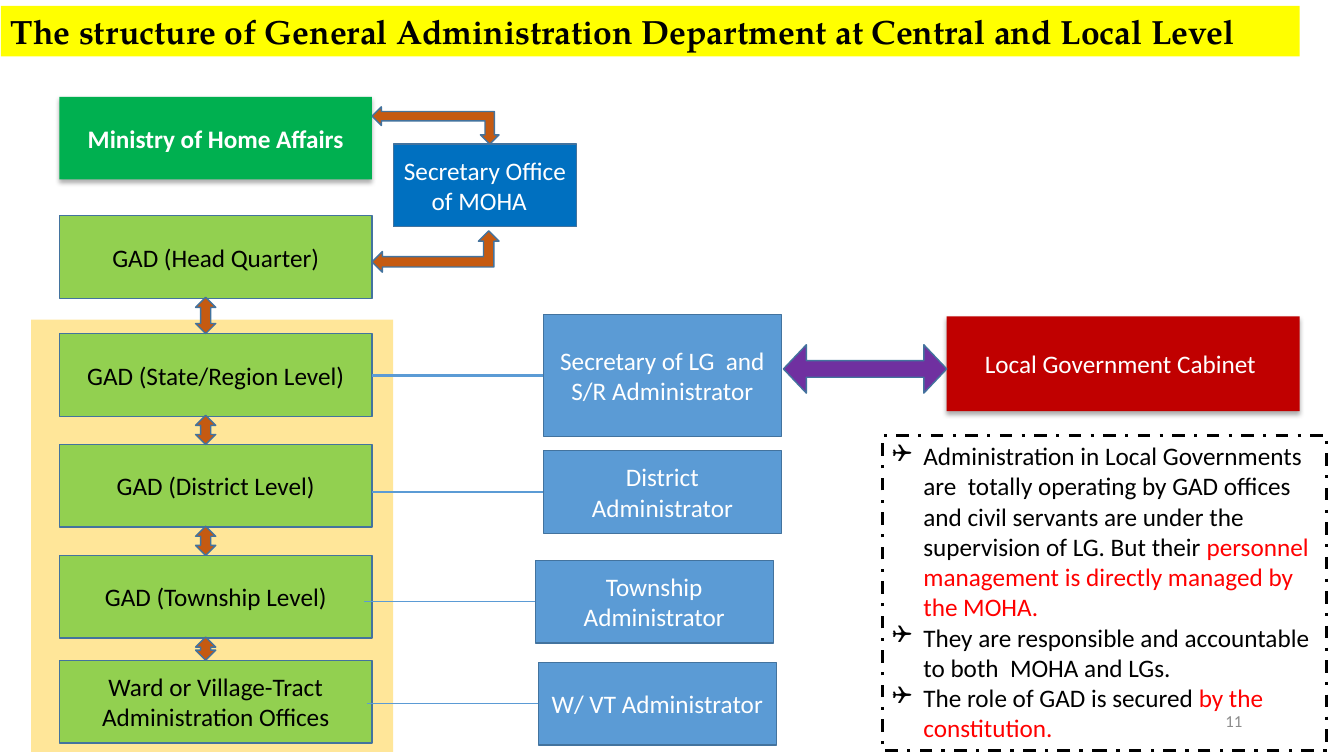
from lxml.etree import SubElement
from pptx import Presentation
from pptx.dml.color import RGBColor
from pptx.enum.dml import MSO_LINE
from pptx.enum.shapes import MSO_CONNECTOR, MSO_SHAPE
from pptx.enum.text import MSO_ANCHOR, PP_ALIGN
from pptx.oxml.ns import qn
from pptx.util import Inches, Pt

WIDTH, HEIGHT = 13.33, 7.5
BLACK, WHITE, RED = "000000", "FFFFFF", "FF0000"
GREEN, BLUE, ORANGE, EDGE = "92D050", "5B9BD5", "C55A11", "43739E"

TITLE = "The structure of General Administration Department at Central and Local Level"
OFFICES = [
    (2.14, "GAD (Head Quarter)"),
    (3.31, "GAD (State/Region Level)"),
    (4.41, "GAD (District Level)"),
    (5.51, "GAD (Township Level)"),
    (6.55, "Ward or Village-Tract Administration Offices"),
]
OFFICIALS = [
    (5.39, 3.12, 1.21, 1.5, "Secretary of LG  and S/R Administrator"),
    (5.39, 4.47, 0.82, 1.5, "District Administrator"),
    (5.31, 5.56, 0.82, 1, "Township Administrator"),
    (5.34, 6.57, 0.82, 1, "W/ VT Administrator"),
]
NOTES = [
    [("Administration in Local Governments are  totally operating by GAD offices and civil "
      "servants are under the supervision of LG. But their ", BLACK),
     ("personnel management is directly managed by the MOHA.", RED)],
    [("They are responsible and accountable to both  MOHA and LGs.", BLACK)],
    [("The role of GAD is secured ", BLACK), ("by the constitution.", RED)],
]
OFFICE_X, OFFICE_W, BOX_H = 0.59, 3.1, 0.82
OFFICE_RIGHT = OFFICE_X + OFFICE_W
OFFICIAL_W, LINK_W = 2.36, 1.7
ARROW_X, ARROW_W = 1.94, 0.2
BEND_W = 1.26
CABINET_X = 9.39

prs = Presentation()
prs.slide_width, prs.slide_height = Inches(WIDTH), Inches(HEIGHT)
s = prs.slides.add_slide(prs.slide_layouts[6])


def rgb(hex6):
    return RGBColor.from_string(hex6)


def add_run(p, text, color, size=18, bold=False, font="Calibri"):
    r = p.add_run()
    r.text = text
    r.font.size, r.font.bold, r.font.name = Pt(size), bold, font
    r.font.color.rgb = rgb(color)


def shape(kind, x, y, w, h, fill=None, line=EDGE, width=1):
    sp = s.shapes.add_shape(kind, Inches(x), Inches(y), Inches(w), Inches(h))
    sp.shadow.inherit = False
    if fill:
        sp.fill.solid()
        sp.fill.fore_color.rgb = rgb(fill)
    else:
        sp.fill.background()
    if line:
        sp.line.color.rgb, sp.line.width = rgb(line), Pt(width)
    else:
        sp.line.fill.background()
    return sp


def box(x, y, w, h, fill, text, color=WHITE, line=EDGE, bold=False):
    sp = shape(MSO_SHAPE.RECTANGLE, x, y, w, h, fill, line)
    tf = sp.text_frame
    tf.word_wrap, tf.vertical_anchor = True, MSO_ANCHOR.MIDDLE
    p = tf.paragraphs[0]
    p.alignment = PP_ALIGN.CENTER
    add_run(p, text, color, bold=bold)
    return sp


def add_shadow(sp):
    effects = sp._element.spPr.find(qn("a:effectLst"))
    shadow = SubElement(effects, qn("a:outerShdw"), blurRad=str(Pt(3.5)), dist=str(Pt(2.2)),
                        dir="5400000", algn="t", rotWithShape="0")
    color = SubElement(shadow, qn("a:srgbClr"), val=BLACK)
    SubElement(color, qn("a:alpha"), val="32000")


def link(x1, x2, y, width):
    cn = s.shapes.add_connector(MSO_CONNECTOR.STRAIGHT, Inches(x1), Inches(y), Inches(x2), Inches(y))
    cn.line.color.rgb, cn.line.width = rgb(BLUE), Pt(width)
    SubElement(cn._element.spPr, qn("a:effectLst"))


def add_bullet(p, char):
    pPr = p._p.get_or_add_pPr()
    pPr.set("marL", str(Inches(0.31)))
    pPr.set("indent", str(-Inches(0.31)))
    SubElement(pPr, qn("a:buFont"), typeface="Wingdings")
    SubElement(pPr, qn("a:buChar"), char=char)


def main():
    """Build the administration structure slide."""
    shape(MSO_SHAPE.RECTANGLE, 0.31, 3.17, 3.59, 4.29, "FFE699", None)
    title = shape(MSO_SHAPE.RECTANGLE, 0.01, 0.06, 12.88, 0.5, "FFFF00", None)
    tf = title.text_frame
    tf.word_wrap, tf.vertical_anchor = True, MSO_ANCHOR.TOP
    tf.paragraphs[0].alignment = PP_ALIGN.LEFT
    add_run(tf.paragraphs[0], TITLE, BLACK, 24, True, "TeX Gyre Pagella")

    add_shadow(box(OFFICE_X, 0.96, OFFICE_W, BOX_H, "00B050", "Ministry of Home Affairs",
                   line=None, bold=True))
    for y, name in OFFICES:
        box(OFFICE_X, y, OFFICE_W, BOX_H, GREEN, name, BLACK)
    box(3.9, 1.43, 1.82, BOX_H, "0070C0", "Secretary Office of MOHA  ")
    for x, y, h, width, name in OFFICIALS:
        box(x, y, OFFICIAL_W, h, BLUE, name)
        link(x, x - LINK_W, y + h / 2, width)
    add_shadow(box(CABINET_X, 3.14, 3.5, 0.94, "C00000", "Local Government Cabinet ", line=None))

    both = shape(MSO_SHAPE.LEFT_RIGHT_ARROW, 7.77, 3.42, CABINET_X - 7.77, 0.48, "7030A0")
    both.adjustments[0], both.adjustments[1] = 0.344, 0.474
    for (above, _), (below, _) in zip(OFFICES, OFFICES[1:]):
        top = above + BOX_H - 0.01
        shape(MSO_SHAPE.UP_DOWN_ARROW, ARROW_X, top, ARROW_W, below - top, ORANGE)
    shape(MSO_SHAPE.LEFT_UP_ARROW, OFFICE_RIGHT, 2.29, BEND_W, 0.41, ORANGE)
    bend_h = 0.37
    turn = (BEND_W - bend_h) / 2
    bend = shape(MSO_SHAPE.LEFT_UP_ARROW, OFFICE_RIGHT + turn, 1.06 - turn, bend_h, BEND_W, ORANGE)
    bend.rotation = 270

    panel = shape(MSO_SHAPE.RECTANGLE, 8.75, 4.32, 4.41, 3.13, None, BLACK, 2.25)
    panel.line.dash_style = MSO_LINE.DASH_DOT
    tf = panel.text_frame
    tf.word_wrap, tf.vertical_anchor = True, MSO_ANCHOR.TOP
    for i, runs in enumerate(NOTES):
        p = tf.add_paragraph() if i else tf.paragraphs[0]
        p.alignment = PP_ALIGN.LEFT
        add_bullet(p, "❑")
        for text, color in runs:
            add_run(p, text, color)

    number = s.shapes.add_textbox(Inches(9.42), Inches(6.95), Inches(3), Inches(0.4))
    tf = number.text_frame
    tf.word_wrap, tf.vertical_anchor = True, MSO_ANCHOR.MIDDLE
    tf.paragraphs[0].alignment = PP_ALIGN.RIGHT
    add_run(tf.paragraphs[0], "11", "8C8C8C", 12)
    prs.save("out.pptx")


if __name__ == "__main__":
    main()
